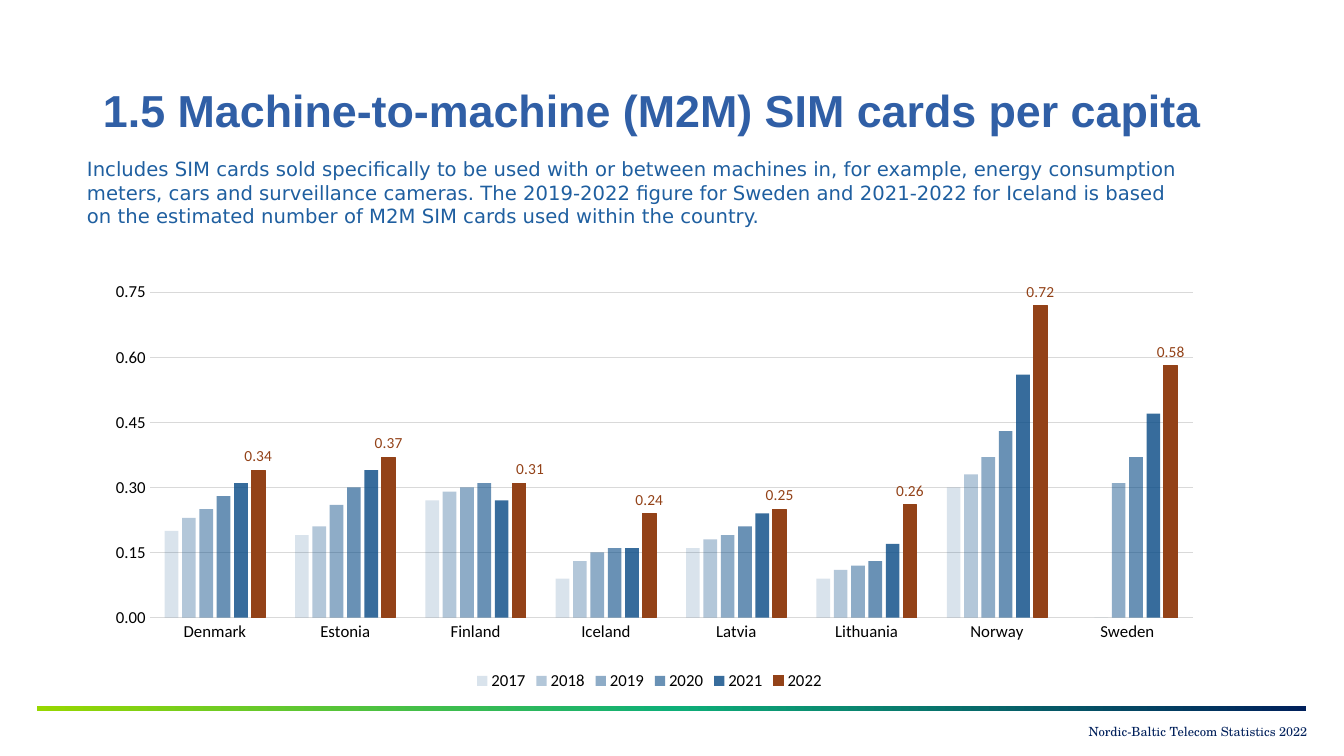
"""Build the slide on machine-to-machine SIM cards per capita."""
from copy import deepcopy
from dataclasses import dataclass

from pptx import Presentation
from pptx.chart.data import CategoryChartData
from pptx.dml.color import RGBColor
from pptx.enum.chart import XL_CHART_TYPE as ChartType, XL_LABEL_POSITION as LabelPosition
from pptx.enum.chart import XL_LEGEND_POSITION as LegendPosition, XL_TICK_MARK as TickMark
from pptx.enum.shapes import MSO_SHAPE as ShapeType
from pptx.enum.text import MSO_ANCHOR as Anchor, PP_ALIGN as Align
from pptx.oxml import parse_xml
from pptx.oxml.ns import nsdecls
from pptx.util import Emu, Pt

EMU_PER_PX = 914400 / 100.8


@dataclass(frozen=True)
class Theme:
    title_color: str = "305FA6"
    body_color: str = "1F5FA0"
    footer_color: str = "00205B"
    rule_colors: tuple = ("97D700", "0EAF78", "00205B")
    bar_color: str = "054884"
    accent: str = "934218"
    grid: str = "D9D9D9"
    black: str = "000000"
    title_font: str = "Arial"
    body_font: str = "DejaVu Sans"
    footer_font: str = "TeX Gyre Schola"
    chart_font: str = "Calibri"
    title_size: int = 32
    body_size: int = 14
    axis_size: int = 12
    label_size: int = 11
    chart_size: int = 10
    footer_size: int = 9
    line_width: float = 0.75


COUNTRIES = ("Denmark", "Estonia", "Finland", "Iceland", "Latvia", "Lithuania", "Norway", "Sweden")
SIM_CARDS = {
    "2017": (0.2, 0.19, 0.27, 0.09, 0.16, 0.09, 0.3, None),
    "2018": (0.23, 0.21, 0.29, 0.13, 0.18, 0.11, 0.33, 0),
    "2019": (0.25, 0.26, 0.3, 0.15, 0.19, 0.12, 0.37, 0.31),
    "2020": (0.28, 0.3, 0.31, 0.16, 0.21, 0.13, 0.43, 0.37),
    "2021": (0.31, 0.34, 0.27, 0.16, 0.24, 0.17, 0.56, 0.47),
    "2022": (0.34, 0.37, 0.31, 0.24, 0.25, 0.26, 0.72, 0.58),
}
OPACITIES = {"2017": 15, "2018": 30, "2019": 45, "2020": 60, "2021": 80}
DESCRIPTION = (
    "Includes SIM cards sold specifically to be used with or between machines in, for example, "
    "energy consumption meters, cars and surveillance cameras. The 2019-2022 figure for Sweden "
    "and 2021-2022 for Iceland is based on the estimated number of M2M SIM cards used within "
    "the country."
)


def px(length):
    return Emu(round(length * EMU_PER_PX))


def style_font(font, name, size, color, bold=False):
    font.name, font.size, font.bold = name, Pt(size), bold
    font.color.rgb = RGBColor.from_string(color)


def style_line(line, color, width):
    line.color.rgb = RGBColor.from_string(color)
    line.width = Pt(width)


def manual_layout(**settings):
    items = "".join(f'<c:{key} val="{value}"/>' for key, value in settings.items())
    return parse_xml(f'<c:layout {nsdecls("c")}><c:manualLayout>{items}</c:manualLayout></c:layout>')


class SlideBuilder:
    def __init__(self, slide, theme):
        self.slide = slide
        self.theme = theme

    def text(self, content, box, *, font, size, color, bold=False, align=Align.LEFT,
             anchor=Anchor.TOP, insets=(10, 5, 10, 5), spacing=None):
        frame = self.slide.shapes.add_textbox(*map(px, box)).text_frame
        frame.word_wrap = True
        frame.vertical_anchor = anchor
        frame.margin_left, frame.margin_top, frame.margin_right, frame.margin_bottom = map(px, insets)
        paragraph = frame.paragraphs[0]
        paragraph.alignment = align
        paragraph.line_spacing = spacing
        run = paragraph.add_run()
        run.text = content
        style_font(run.font, font, size, color, bold)

    def gradient_rule(self, box):
        shape = self.slide.shapes.add_shape(ShapeType.RECTANGLE, *map(px, box))
        shape.shadow.inherit = False
        shape.line.fill.background()
        shape.fill.gradient()
        shape.fill.gradient_angle = 0
        first_stop = shape._element.xpath(".//a:gs")[0]
        first_stop.addnext(deepcopy(first_stop))
        for index, (stop, color) in enumerate(zip(shape.fill.gradient_stops, self.theme.rule_colors)):
            stop.position = index / 2
            stop.color.rgb = RGBColor.from_string(color)

    def column_chart(self, box):
        theme = self.theme
        data = CategoryChartData(number_format="0.00")
        data.categories = COUNTRIES
        for year, values in SIM_CARDS.items():
            data.add_series(year, values)
        chart = self.slide.shapes.add_chart(ChartType.COLUMN_CLUSTERED, *map(px, box), data).chart
        style_font(chart.font, theme.chart_font, theme.chart_size, theme.black)
        chart.has_title = False
        chart.has_legend = True
        chart.legend.position = LegendPosition.BOTTOM
        chart.legend.include_in_layout = False
        style_font(chart.legend.font, theme.chart_font, theme.axis_size, theme.black)
        self.axes(chart)
        plot = chart.plots[0]
        plot.vary_by_categories = False
        plot.gap_width, plot.overlap = 219, -27
        for series in plot.series:
            self.series(series)
        plot_area = chart._chartSpace.xpath("c:chart/c:plotArea")[0]
        for layout in plot_area.xpath("c:layout"):
            plot_area.remove(layout)
        plot_area.insert(0, manual_layout(
            layoutTarget="inner", xMode="edge", yMode="edge", x=0.051, y=0.041, w=0.937, h=0.775))

    def axes(self, chart):
        theme = self.theme
        for axis in (chart.category_axis, chart.value_axis):
            axis.major_tick_mark = axis.minor_tick_mark = TickMark.NONE
            style_font(axis.tick_labels.font, theme.chart_font, theme.axis_size, theme.black)
        style_line(chart.category_axis.format.line, theme.grid, theme.line_width)
        value_axis = chart.value_axis
        value_axis.minimum_scale, value_axis.maximum_scale, value_axis.major_unit = 0, 0.75, 0.15
        value_axis.tick_labels.number_format = "0.00"
        value_axis.tick_labels.number_format_is_linked = False
        value_axis.format.line.fill.background()
        style_line(value_axis.major_gridlines.format.line, theme.grid, theme.line_width)

    def series(self, series):
        theme = self.theme
        series.format.fill.solid()
        opacity = OPACITIES.get(series.name)
        color = theme.bar_color if opacity else theme.accent
        series.format.fill.fore_color.rgb = RGBColor.from_string(color)
        if opacity:
            fill_color = series._element.xpath("c:spPr/a:solidFill/a:srgbClr")[0]
            fill_color.append(parse_xml(f'<a:alpha {nsdecls("a")} val="{opacity * 1000}"/>'))
            return
        style_line(series.format.line, color, theme.line_width)
        labels = series.data_labels
        labels.show_value = True
        labels.number_format, labels.number_format_is_linked = "0.00", False
        labels.position = LabelPosition.OUTSIDE_END
        style_font(labels.font, theme.chart_font, theme.label_size, color)
        finland = series.points[COUNTRIES.index("Finland")].data_label
        finland.position = LabelPosition.OUTSIDE_END
        style_font(finland.font, theme.chart_font, theme.label_size, color)
        series._element.xpath(".//c:dLbl/c:idx")[0].addnext(manual_layout(x=0.01, y=0))


def main():
    theme = Theme()
    presentation = Presentation()
    presentation.slide_width, presentation.slide_height = px(1344), px(756)
    builder = SlideBuilder(presentation.slides.add_slide(presentation.slide_layouts[6]), theme)
    builder.gradient_rule((37, 706, 1269, 5))
    builder.text("Nordic-Baltic Telecom Statistics 2022", (988, 719, 319, 30),
                 font=theme.footer_font, size=theme.footer_size, color=theme.footer_color,
                 align=Align.RIGHT, anchor=Anchor.MIDDLE, insets=(10, 0, 0, 5))
    builder.text("1.5 Machine-to-machine (M2M) SIM cards per capita", (93, 40, 1159, 146),
                 font=theme.title_font, size=theme.title_size, color=theme.title_color,
                 bold=True, anchor=Anchor.MIDDLE, spacing=0.9)
    builder.column_chart((93, 275, 1113, 420))
    builder.text(DESCRIPTION, (77, 152, 1129, 101), font=theme.body_font,
                 size=theme.body_size, color=theme.body_color)
    presentation.save("out.pptx")


if __name__ == "__main__":
    main()
